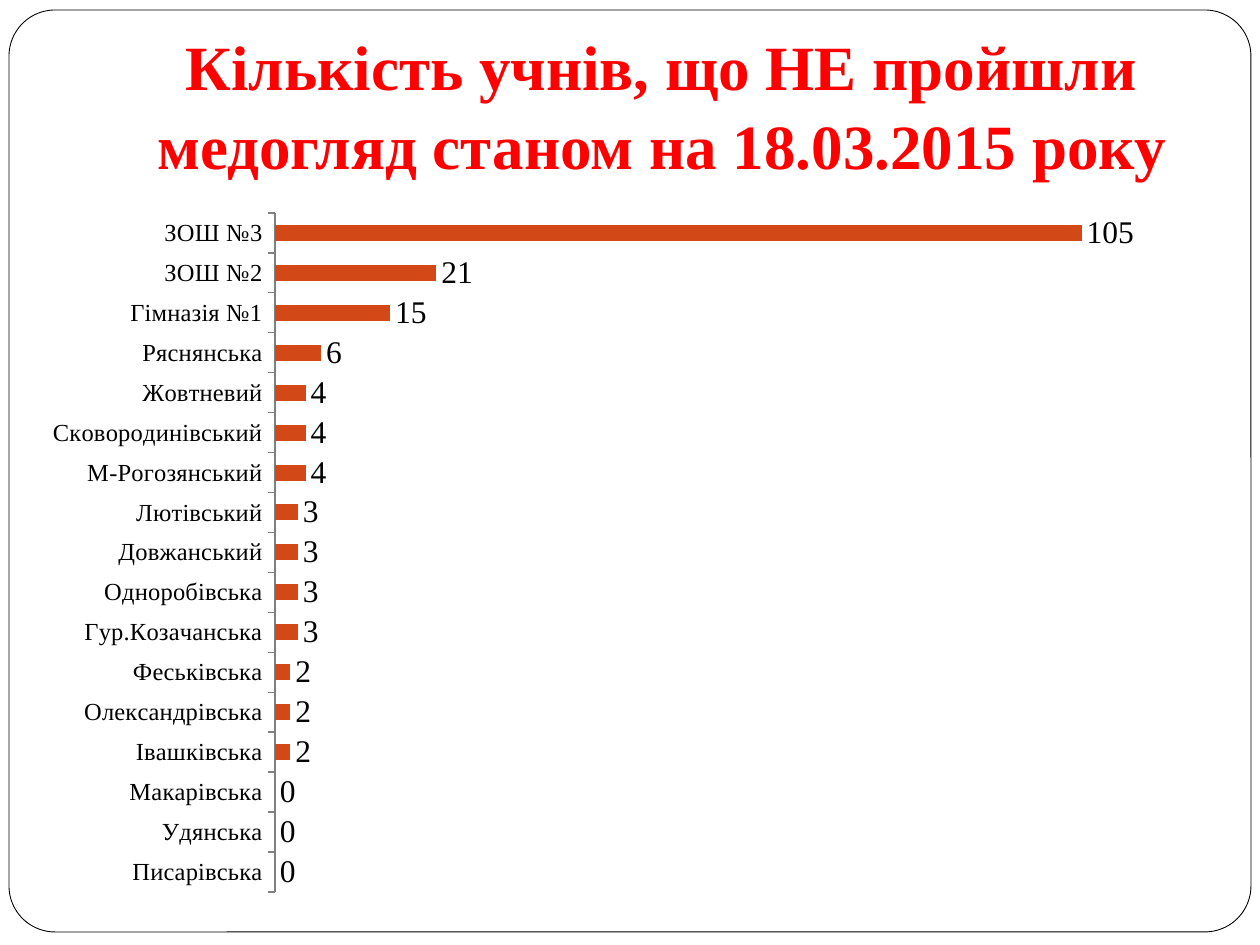
from dataclasses import dataclass

from lxml.etree import SubElement
from pptx import Presentation
from pptx.chart.data import CategoryChartData as ChartData
from pptx.dml.color import RGBColor as RGB
from pptx.enum.chart import XL_CHART_TYPE as Kind
from pptx.enum.chart import XL_LABEL_POSITION as Spot
from pptx.enum.chart import XL_TICK_MARK as Tick
from pptx.enum.shapes import MSO_SHAPE as Shape
from pptx.enum.text import MSO_ANCHOR as Anchor
from pptx.enum.text import PP_ALIGN as Align
from pptx.oxml.ns import qn
from pptx.util import Emu, Pt

# Content
TITLE = "Кількість учнів, що НЕ пройшли медогляд станом на 18.03.2015 року"
PUPILS = [
    ("Писарівська", 0), ("Удянська", 0), ("Макарівська", 0),
    ("Івашківська", 2), ("Олександрівська", 2), ("Феськівська", 2),
    ("Гур.Козачанська", 3), ("Одноробівська", 3), ("Довжанський", 3),
    ("Лютівський", 3), ("М-Рогозянський", 4), ("Сковородинівський", 4),
    ("Жовтневий", 4), ("Ряснянська", 6), ("Гімназія №1", 15),
    ("ЗОШ №2", 21), ("ЗОШ №3", 105),
]

# Places in px: left, top, width, height
PAGE = (1260, 945)
FRAME = (9, 10, 1242, 922)
HEAD = (126, 38, 1071, 157)
CHART = (29, 199, 1191, 706)
PLOT = (275, 213, 922, 679)


@dataclass(frozen=True)
class Theme:
    font: str = "Times New Roman"
    white: RGB = RGB(255, 255, 255)
    black: RGB = RGB(0, 0, 0)
    red: RGB = RGB(255, 0, 0)
    bar: RGB = RGB(0xD3, 0x48, 0x17)
    axis: RGB = RGB(0x80, 0x80, 0x80)
    head: int = 36
    label: int = 18
    name: int = 14


T = Theme()


def px(n):
    return Emu(round(n * 914400 / 126))


def box(rect):
    return [px(n) for n in rect]


def style(font, size, color, bold=False):
    font.name, font.size, font.bold = T.font, Pt(size), bold
    font.color.rgb = color


def add_frame(slide):
    frame = slide.shapes.add_shape(Shape.ROUNDED_RECTANGLE, *box(FRAME))
    frame.adjustments[0] = 0.05
    frame.shadow.inherit = False
    frame.fill.solid()
    frame.fill.fore_color.rgb = T.white
    frame.line.color.rgb = T.black
    frame.line.width = Pt(0.5)


def add_title(slide):
    text = slide.shapes.add_textbox(*box(HEAD)).text_frame
    text.word_wrap = True
    text.vertical_anchor = Anchor.BOTTOM
    text.margin_bottom = px(13)
    text.text = TITLE
    para = text.paragraphs[0]
    para.alignment = Align.CENTER
    para.line_spacing = 1.05
    style(para.runs[0].font, T.head, T.red, True)


def place_plot(chart):
    """Fix the inner plot area as shares of the chart."""
    area = chart._chartSpace.chart.plotArea
    for old in area.findall(qn("c:layout")):
        area.remove(old)
    layout = SubElement(area, qn("c:layout"))
    area.insert(0, layout)
    manual = SubElement(layout, qn("c:manualLayout"))
    left, top, wide, high = CHART
    parts = [
        ("layoutTarget", "inner"), ("xMode", "edge"), ("yMode", "edge"),
        ("x", (PLOT[0] - left) / wide), ("y", (PLOT[1] - top) / high),
        ("w", PLOT[2] / wide), ("h", PLOT[3] / high),
    ]
    for tag, val in parts:
        SubElement(manual, qn("c:" + tag)).set("val", str(val))


def add_chart(slide):
    data = ChartData()
    data.categories = [name for name, _ in PUPILS]
    data.add_series("Series 1", [count for _, count in PUPILS])
    chart = slide.shapes.add_chart(Kind.BAR_CLUSTERED, *box(CHART), data).chart
    chart.has_legend = chart.has_title = False
    style(chart.font, T.label, T.black)

    # Bars and their values
    plot = chart.plots[0]
    plot.gap_width = 150
    plot.vary_by_categories = False
    fill = plot.series[0].format.fill
    fill.solid()
    fill.fore_color.rgb = T.bar
    plot.has_data_labels = True
    labels = plot.data_labels
    labels.show_value = True
    labels.position = Spot.OUTSIDE_END
    style(labels.font, T.label, T.black)

    # Axes
    names, scale = chart.category_axis, chart.value_axis
    style(names.tick_labels.font, T.name, T.black)
    names.major_tick_mark = Tick.OUTSIDE
    names.format.line.color.rgb = T.axis
    scale.minimum_scale, scale.maximum_scale = 0, 120
    scale.has_major_gridlines = False
    scale.visible = False
    place_plot(chart)


def main():
    deck = Presentation()
    deck.slide_width, deck.slide_height = box(PAGE)
    slide = deck.slides.add_slide(deck.slide_layouts[6])
    add_frame(slide)
    add_title(slide)
    add_chart(slide)
    deck.save("out.pptx")


if __name__ == "__main__":
    main()
